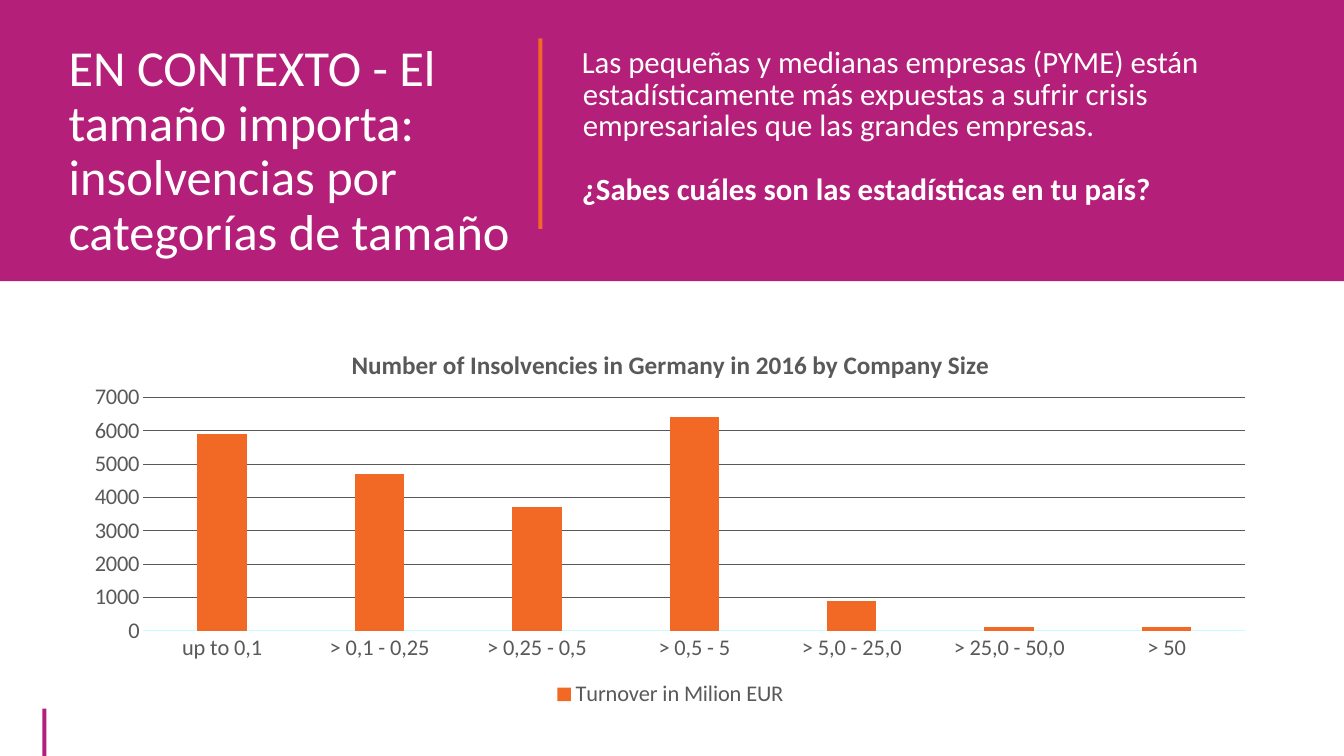
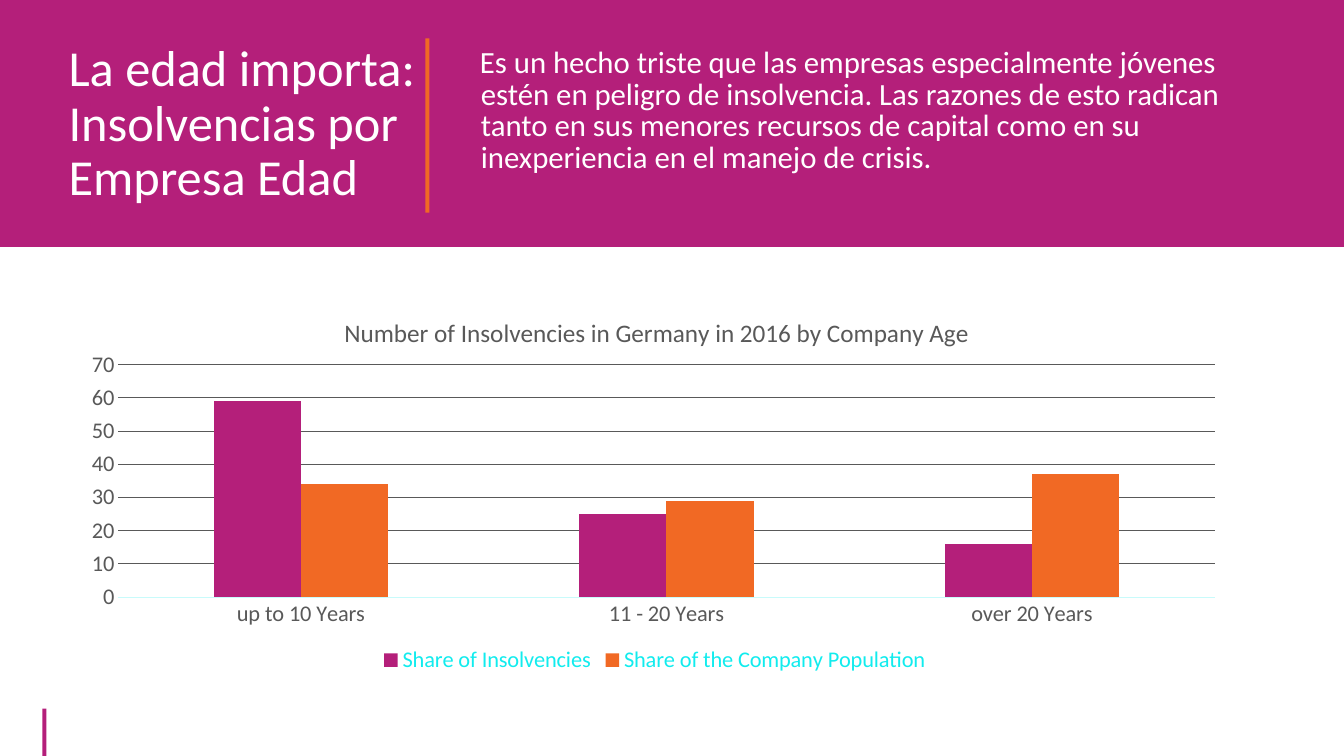
from dataclasses import dataclass

import pptx
import pptx.chart.chart
import pptx.chart.data
import pptx.dml.color
import pptx.enum.chart
import pptx.enum.shapes
import pptx.enum.text
import pptx.oxml
import pptx.oxml.ns
import pptx.shapes.autoshape
import pptx.slide
import pptx.text.text
import pptx.util
from pptx.util import Inches

FONT = "Calibri"
COLORS = {
    "magenta": "B41F7A",
    "orange": "F16924",
    "white": "FFFFFF",
    "gray": "595959",
    "cyan": "11ECEE",
    "pale_cyan": "C8FBFB",
}
SLIDE_WIDTH, SLIDE_HEIGHT = 13.33, 7.5
HEADER_TOP = 0.38
BODY_TOP = 0.42
RULE_WIDTH = 0.04
FOOTER_MARK = (0.42, 7.03, RULE_WIDTH, 0.47)
LINE_PITCH = 22.8

Box = tuple[float, float, float, float]


@dataclass(frozen=True)
class Series:
    name: str
    values: tuple[int, ...]
    color: str


@dataclass(frozen=True)
class InsolvencyChart:
    title: str
    title_bold: bool
    box: Box
    plot_left: float
    plot_width: float
    categories: tuple[str, ...]
    series: tuple[Series, ...]
    maximum: int
    step: int
    overlap: int
    legend_color: str


@dataclass(frozen=True)
class Topic:
    title: str
    title_width: float
    message: tuple[str, ...]
    message_left: float
    message_width: float
    band_height: float
    divider_left: float
    divider_height: float
    chart: InsolvencyChart


TOPICS = (
    Topic(
        title="EN CONTEXTO - El tamaño importa: insolvencias por categorías de tamaño",
        title_width=4.68,
        message=(
            "Las pequeñas y medianas empresas (PYME) están estadísticamente más "
            "expuestas a sufrir crisis empresariales que las grandes empresas.",
            "¿Sabes cuáles son las estadísticas en tu país?",
        ),
        message_left=5.67,
        message_width=7.59,
        band_height=2.79,
        divider_left=5.34,
        divider_height=1.89,
        chart=InsolvencyChart(
            title="Number of Insolvencies in Germany in 2016 by Company Size",
            title_bold=True,
            box=(0.71, 3.21, 11.88, 3.86),
            plot_left=0.06,
            plot_width=0.92,
            categories=("up to 0,1", "> 0,1 - 0,25", "> 0,25 - 0,5", "> 0,5 - 5",
                        "> 5,0 - 25,0", "> 25,0 - 50,0", "> 50"),
            series=(Series("Turnover in Milion EUR",
                           (5900, 4700, 3700, 6400, 900, 100, 100), "orange"),),
            maximum=7000,
            step=1000,
            overlap=-27,
            legend_color="gray",
        ),
    ),
    Topic(
        title="La edad importa: Insolvencias por Empresa Edad",
        title_width=4.26,
        message=(
            "Es un hecho triste que las empresas especialmente jóvenes estén en "
            "peligro de insolvencia. Las razones de esto radican tanto en sus menores "
            "recursos de capital como en su inexperiencia en el manejo de crisis.",
        ),
        message_left=4.66,
        message_width=8.15,
        band_height=2.45,
        divider_left=4.22,
        divider_height=1.73,
        chart=InsolvencyChart(
            title="Number of Insolvencies in Germany in 2016 by Company Age",
            title_bold=False,
            box=(0.71, 2.89, 11.57, 3.84),
            plot_left=0.04,
            plot_width=0.94,
            categories=("up to 10 Years", "11 - 20 Years", "over 20 Years"),
            series=(
                Series("Share of Insolvencies", (59, 25, 16), "magenta"),
                Series("Share of the Company Population", (34, 29, 37), "orange"),
            ),
            maximum=70,
            step=10,
            overlap=0,
            legend_color="cyan",
        ),
    ),
)


def rgb(color: str) -> pptx.dml.color.RGBColor:
    return pptx.dml.color.RGBColor.from_string(COLORS[color])


def style_font(font: pptx.text.text.Font, size: float, color: str, bold: bool = False) -> None:
    font.name = FONT
    font.size = pptx.util.Pt(size)
    font.bold = bold
    font.color.rgb = rgb(color)


def add_bar(slide: pptx.slide.Slide, box: Box, color: str) -> pptx.shapes.autoshape.Shape:
    bar = slide.shapes.add_shape(
        pptx.enum.shapes.MSO_SHAPE.RECTANGLE, *(Inches(length) for length in box))
    bar.shadow.inherit = False
    bar.fill.solid()
    bar.fill.fore_color.rgb = rgb(color)
    bar.line.fill.background()
    return bar


def place_text(holder: pptx.shapes.autoshape.Shape, box: Box, text: str) -> None:
    holder.left, holder.top, holder.width, holder.height = (Inches(length) for length in box)
    frame = holder.text_frame
    frame.text = text
    frame.word_wrap = True
    frame.auto_size = pptx.enum.text.MSO_AUTO_SIZE.NONE
    frame.vertical_anchor = pptx.enum.text.MSO_ANCHOR.TOP
    for paragraph in frame.paragraphs:
        paragraph.alignment = pptx.enum.text.PP_ALIGN.LEFT
        paragraph.space_before = pptx.util.Pt(0)


def add_header(slide: pptx.slide.Slide, topic: Topic) -> None:
    title = slide.shapes.title
    place_text(title, (0.58, HEADER_TOP, topic.title_width, topic.band_height - HEADER_TOP),
               topic.title)
    heading = title.text_frame.paragraphs[0]
    heading.line_spacing = 0.9
    style_font(heading.runs[0].font, 36, "white")

    message = slide.placeholders[1]
    place_text(message, (topic.message_left, BODY_TOP, topic.message_width,
                         topic.band_height - BODY_TOP), "\n".join(topic.message))
    for element in message.element.xpath(".//a:p"):
        properties = element.get_or_add_pPr()
        properties.set("marL", str(Inches(0.01)))
        properties.set("indent", str(Inches(-0.01)))
        properties.append(pptx.oxml.parse_xml(
            f"<a:buNone {pptx.oxml.ns.nsdecls('a')}/>"))
    for index, paragraph in enumerate(message.text_frame.paragraphs):
        paragraph.line_spacing = pptx.util.Pt(LINE_PITCH)
        paragraph.space_before = pptx.util.Pt(LINE_PITCH if index else 0)
        style_font(paragraph.runs[0].font, 22, "white", bold=index > 0)

    band = add_bar(slide, (0, 0, SLIDE_WIDTH, topic.band_height), "magenta")
    title.element.addprevious(band.element)
    add_bar(slide, (topic.divider_left, HEADER_TOP, RULE_WIDTH, topic.divider_height), "orange")


def set_layout(chart: pptx.chart.chart.Chart, part: str, position: int,
               **fractions: float) -> None:
    parent = chart.element.xpath(f"c:chart/c:{part}")[0]
    for existing in parent.xpath("c:layout"):
        parent.remove(existing)
    target = '<c:layoutTarget val="inner"/>' if part == "plotArea" else ""
    modes = "".join(f'<c:{axis}Mode val="edge"/>' for axis in "xy")
    values = "".join(f'<c:{key} val="{value}"/>' for key, value in fractions.items())
    parent.insert(position, pptx.oxml.parse_xml(
        f"<c:layout {pptx.oxml.ns.nsdecls('c')}><c:manualLayout>"
        f"{target}{modes}{values}</c:manualLayout></c:layout>"))


def add_insolvency_chart(slide: pptx.slide.Slide, content: InsolvencyChart) -> None:
    data = pptx.chart.data.CategoryChartData()
    data.categories = content.categories
    for series in content.series:
        data.add_series(series.name, series.values)
    chart = slide.shapes.add_chart(
        pptx.enum.chart.XL_CHART_TYPE.COLUMN_CLUSTERED,
        *(Inches(length) for length in content.box), data).chart
    style_font(chart.font, 16, "gray")

    chart.has_title = True
    chart.chart_title.text_frame.text = content.title
    style_font(chart.chart_title.text_frame.paragraphs[0].runs[0].font,
               18, "gray", content.title_bold)
    set_layout(chart, "title", 1, x=0.23, y=0.05)
    set_layout(chart, "plotArea", 0, x=content.plot_left, y=0.19,
               w=content.plot_width, h=0.6)

    chart.has_legend = True
    chart.legend.position = pptx.enum.chart.XL_LEGEND_POSITION.BOTTOM
    chart.legend.include_in_layout = False
    style_font(chart.legend.font, 16, content.legend_color)

    plot = chart.plots[0]
    plot.vary_by_categories = False
    plot.gap_width = 219
    plot.overlap = content.overlap
    for drawn, series in zip(plot.series, content.series):
        drawn.format.fill.solid()
        drawn.format.fill.fore_color.rgb = rgb(series.color)

    for axis in (chart.category_axis, chart.value_axis):
        axis.major_tick_mark = pptx.enum.chart.XL_TICK_MARK.NONE
        axis.minor_tick_mark = pptx.enum.chart.XL_TICK_MARK.NONE
        style_font(axis.tick_labels.font, 16, "gray")
    chart.value_axis.minimum_scale = 0
    chart.value_axis.maximum_scale = content.maximum
    chart.value_axis.major_unit = content.step
    chart.value_axis.format.line.fill.background()
    chart.value_axis.has_major_gridlines = True
    for line, color in ((chart.category_axis.format.line, "pale_cyan"),
                        (chart.value_axis.major_gridlines.format.line, "gray")):
        line.color.rgb = rgb(color)
        line.width = pptx.util.Pt(0.75)


def main() -> None:
    deck = pptx.Presentation()
    deck.slide_width = Inches(SLIDE_WIDTH)
    deck.slide_height = Inches(SLIDE_HEIGHT)
    for topic in TOPICS:
        slide = deck.slides.add_slide(deck.slide_layouts[1])
        add_header(slide, topic)
        add_bar(slide, FOOTER_MARK, "magenta")
        add_insolvency_chart(slide, topic.chart)
    deck.save("out.pptx")


if __name__ == "__main__":
    main()
